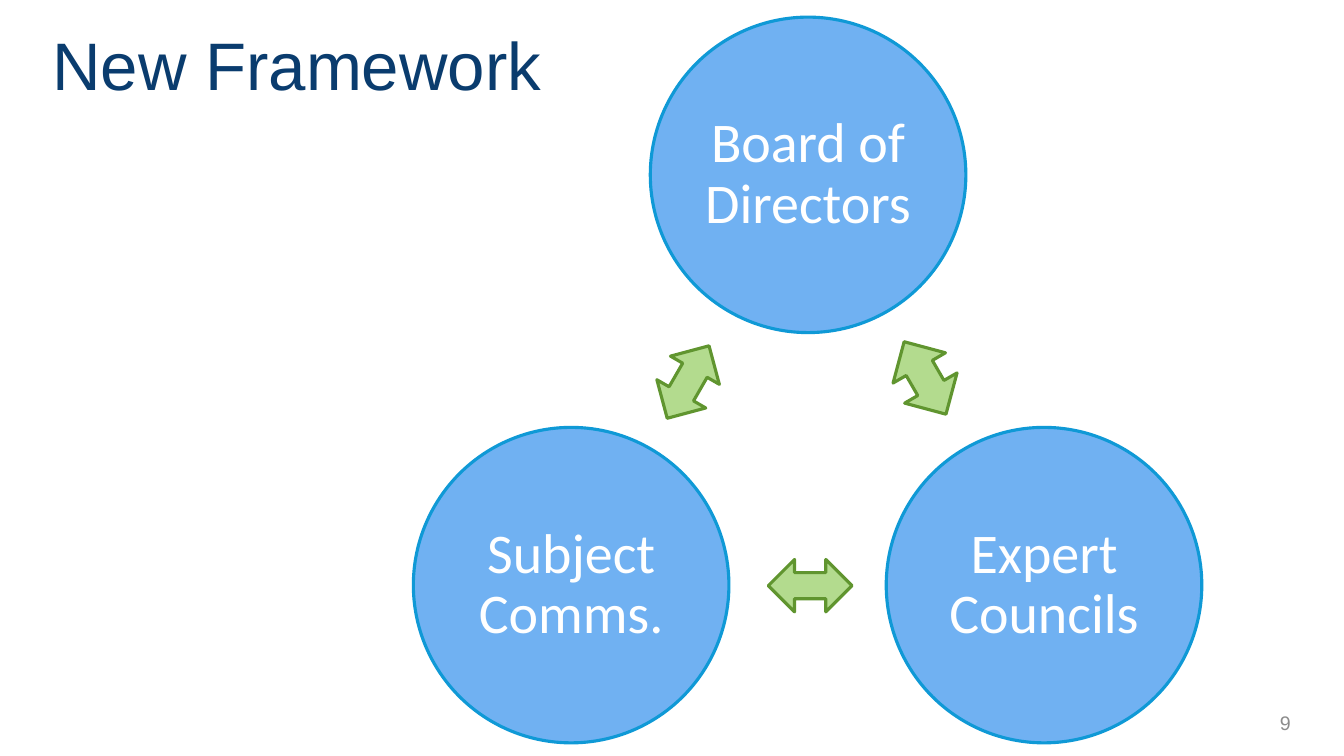
"""Build the New Framework slide: three linked circles."""
from pptx import Presentation
from pptx.dml.color import RGBColor
from pptx.enum.shapes import MSO_SHAPE
from pptx.enum.text import MSO_ANCHOR, PP_ALIGN
from pptx.util import Inches, Pt

NAVY = RGBColor(0x0A, 0x3C, 0x6E)
GRAY = RGBColor(0x8C, 0x8C, 0x8C)
WHITE = RGBColor(0xFF, 0xFF, 0xFF)
BLUE = RGBColor(0x70, 0xB1, 0xF2)
RIM = RGBColor(0x0F, 0x99, 0xD6)
GREEN = RGBColor(0xB3, 0xDB, 0x8E)
EDGE = RGBColor(0x60, 0x95, 0x2F)

SIZE = 3.13
INSET = Inches(0.06)


def draw(kind, left, top, width, height, fill, line):
    shape = slide.shapes.add_shape(
        kind, Inches(left), Inches(top), Inches(width), Inches(height))
    shape.shadow.inherit = False
    shape.fill.solid()
    shape.fill.fore_color.rgb = fill
    shape.line.color.rgb = line
    shape.line.width = Pt(2.25)
    return shape


def write(frame, text, name, size, color, align):
    frame.word_wrap = True
    frame.vertical_anchor = MSO_ANCHOR.MIDDLE
    para = frame.paragraphs[0]
    para.text = text
    para.alignment = align
    para.font.name = name
    para.font.size = Pt(size)
    para.font.color.rgb = color
    return para


deck = Presentation()
deck.slide_width = Inches(13.33)
deck.slide_height = Inches(7.5)
slide = deck.slides.add_slide(deck.slide_layouts[6])

for text, left, top in [
    ("Board of Directors", 6.45, 0.17),
    ("Expert Councils", 8.79, 4.24),
    ("Subject Comms.", 4.1, 4.24),
]:
    circle = draw(MSO_SHAPE.OVAL, left, top, SIZE, SIZE, BLUE, RIM)
    frame = circle.text_frame
    frame.margin_left = frame.margin_right = INSET
    frame.margin_top = frame.margin_bottom = INSET
    para = write(frame, text, "Calibri", 40, WHITE, PP_ALIGN.CENTER)
    para.line_spacing = 0.9

for left, top, height, angle in [
    (8.76, 3.45, 0.6, 60),
    (7.62, 5.55, 0.52, 180),
    (6.41, 3.51, 0.56, 300),
]:
    arrow = draw(MSO_SHAPE.LEFT_RIGHT_ARROW, left, top, 0.83, height, GREEN, EDGE)
    arrow.rotation = angle

for text, left, top, width, height, size, color, align in [
    ("New Framework", 0.42, 0.17, 12.74, 0.93, 48, NAVY, PP_ALIGN.LEFT),
    ("9", 10.64, 6.97, 2.26, 0.4, 14, GRAY, PP_ALIGN.RIGHT),
]:
    box = slide.shapes.add_textbox(
        Inches(left), Inches(top), Inches(width), Inches(height))
    write(box.text_frame, text, "Arial", size, color, align)

deck.save("out.pptx")
